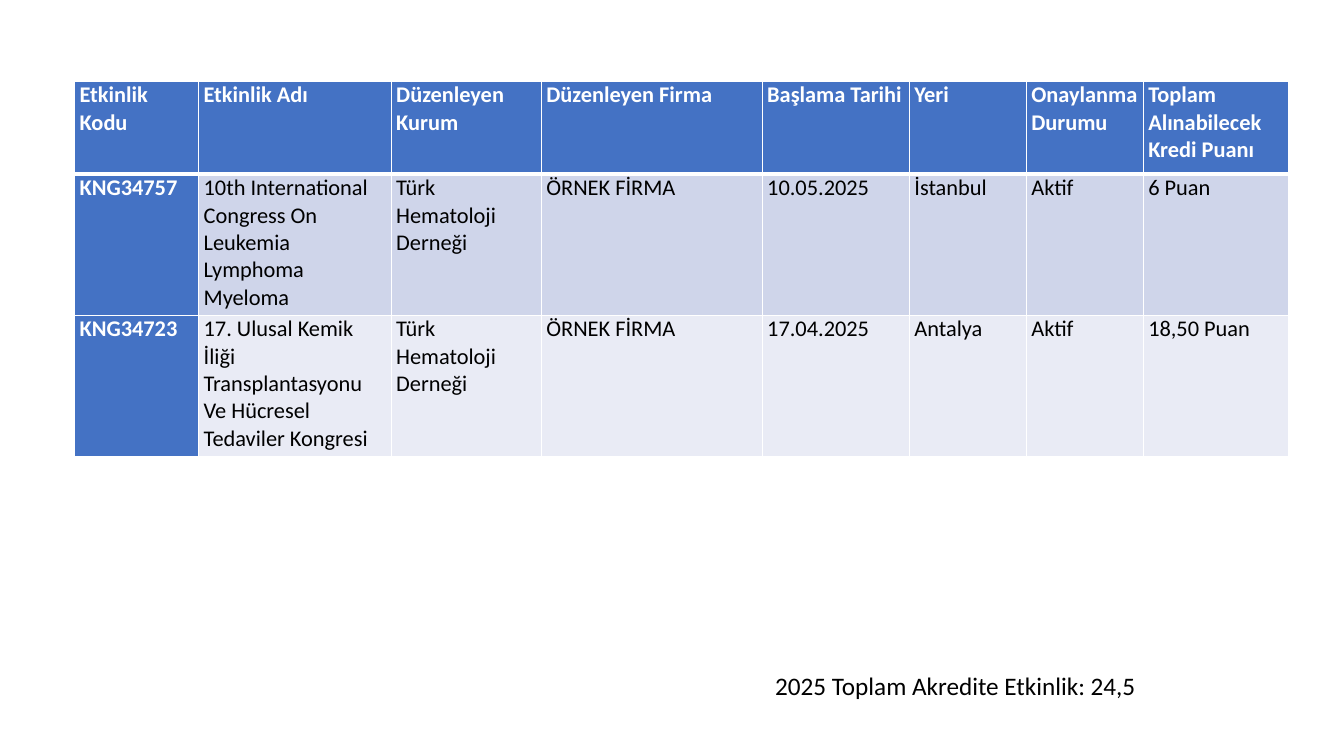
from pptx import Presentation
from pptx.dml.color import RGBColor
from pptx.oxml.ns import qn
from pptx.util import Inches, Pt
from lxml.etree import SubElement

BLUE, WHITE, BLACK = "4472C4", "FFFFFF", "000000"
ROW_BANDS = ["CFD5EA", "E9EBF5"]
COLUMN_WIDTHS = [1.23, 1.91, 1.49, 2.19, 1.46, 1.16, 1.16, 1.44]
ROW_HEIGHTS = [0.92, 1.4, 1.4]
EVENTS = [
    ["Etkinlik Kodu", "Etkinlik Adı", "Düzenleyen Kurum", "Düzenleyen Firma",
     "Başlama Tarihi", "Yeri", "Onaylanma Durumu", "Toplam Alınabilecek Kredi Puanı"],
    ["KNG34757", "10th International Congress On Leukemia Lymphoma Myeloma",
     "Türk Hematoloji Derneği", "ÖRNEK FİRMA", "10.05.2025", "İstanbul",
     "Aktif", "6 Puan"],
    ["KNG34723", "17. Ulusal Kemik İliği Transplantasyonu Ve Hücresel Tedaviler Kongresi",
     "Türk Hematoloji Derneği", "ÖRNEK FİRMA", "17.04.2025", "Antalya",
     "Aktif", "18,50 Puan"],
]


def rgb(hex_color):
    return RGBColor.from_string(hex_color)


def write_text(frame, text, size=16, color=BLACK, bold=False):
    frame.word_wrap = True
    run = frame.paragraphs[0].add_run()
    run.text = text
    run.font.name = "Calibri"
    run.font.size = Pt(size)
    run.font.bold = bold
    run.font.color.rgb = rgb(color)


def set_borders(cell, top=1, bottom=1):
    properties = cell._tc.get_or_add_tcPr()
    for side, width in (("L", 1), ("R", 1), ("T", top), ("B", bottom)):
        line = SubElement(properties, qn(f"a:ln{side}"), w=str(Pt(width)))
        fill = SubElement(line, qn("a:solidFill"))
        SubElement(fill, qn("a:srgbClr"), val=WHITE)


def fill_cell(cell, text, row, column):
    is_heading = row == 0 or column == 0
    cell.margin_left = cell.margin_right = Inches(0.05)
    cell.margin_top = cell.margin_bottom = 0
    # The rule under the header is thicker than the others
    set_borders(cell, top=3 if row == 1 else 1, bottom=3 if row == 0 else 1)
    cell.fill.solid()
    cell.fill.fore_color.rgb = rgb(BLUE if is_heading else ROW_BANDS[row - 1])
    write_text(cell.text_frame, text, color=WHITE if is_heading else BLACK,
               bold=is_heading)


def add_event_table(slide, left, top):
    table = slide.shapes.add_table(
        len(EVENTS), len(COLUMN_WIDTHS), Inches(left), Inches(top),
        Inches(sum(COLUMN_WIDTHS)), Inches(sum(ROW_HEIGHTS))).table
    table.first_col = True
    for column, width in zip(table.columns, COLUMN_WIDTHS):
        column.width = Inches(width)
    for row, height in zip(table.rows, ROW_HEIGHTS):
        row.height = Inches(height)
    for row, event in enumerate(EVENTS):
        for column, text in enumerate(event):
            fill_cell(table.cell(row, column), text, row, column)


def add_label(slide, text, left, top, width, height, **text_format):
    label = slide.shapes.add_textbox(
        Inches(left), Inches(top), Inches(width), Inches(height))
    write_text(label.text_frame, text, **text_format)


def main():
    presentation = Presentation()
    presentation.slide_width = Inches(13.33)
    presentation.slide_height = Inches(7.5)
    slide = presentation.slides.add_slide(presentation.slide_layouts[6])

    # Accredited events
    add_event_table(slide, 0.74, 0.81)

    # Yearly total
    add_label(slide, "2025 Toplam Akredite Etkinlik: 24,5",
              7.59, 6.6, 3.82, 0.4, size=18)

    presentation.save("out.pptx")


if __name__ == "__main__":
    main()
